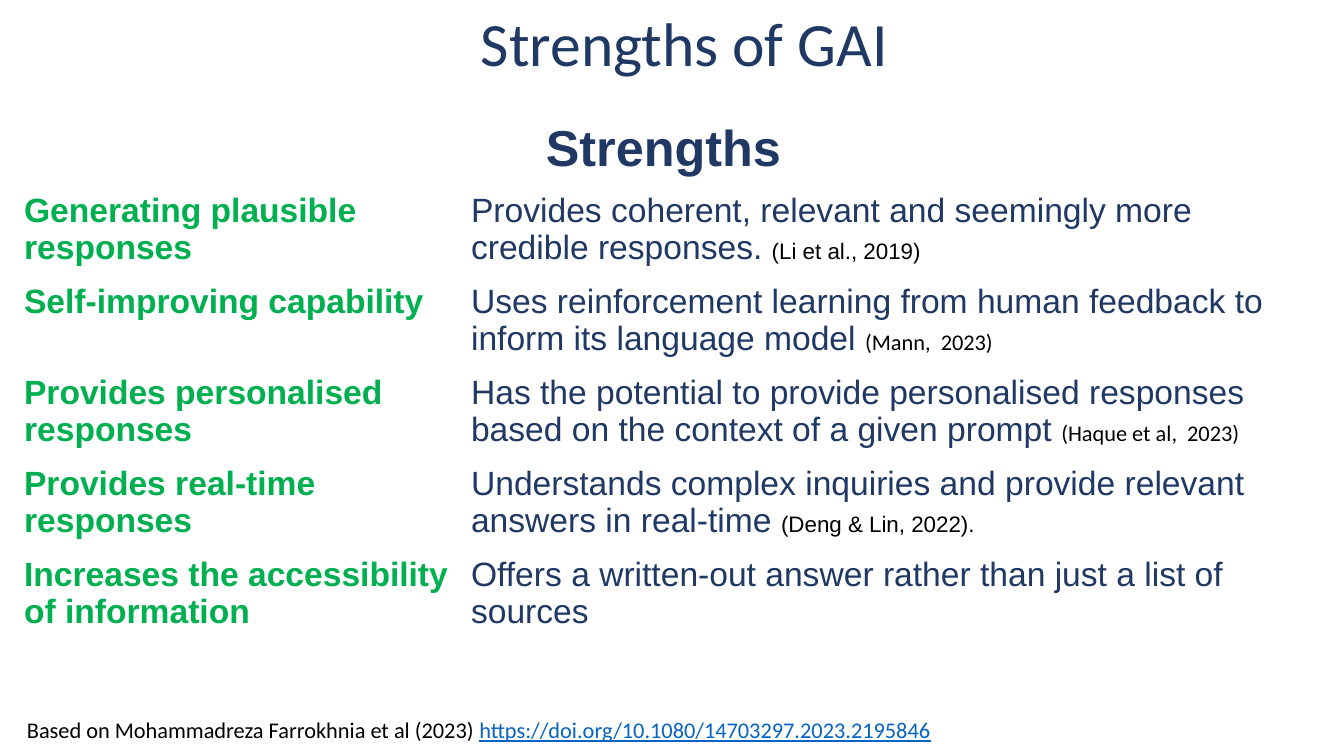
from dataclasses import dataclass

from pptx import Presentation
from pptx.dml.color import RGBColor
from pptx.enum.text import PP_ALIGN
from pptx.util import Pt

EMU_PER_PX = 914400 / 100.8


@dataclass(frozen=True)
class Theme:
    navy: str = "1F3864"
    green: str = "00B050"
    black: str = "000000"
    link: str = "0563C1"
    heading_font: str = "Calibri"
    body_font: str = "Arial"
    title: int = 44
    header: int = 36
    body: int = 24
    note: int = 16


THEME = Theme()

STRENGTHS = [
    ("Generating plausible responses",
     "Provides coherent, relevant and seemingly more credible responses. ",
     "(Li et al., 2019)", THEME.body_font),
    ("Self-improving capability",
     "Uses reinforcement learning from human feedback to inform its language model ",
     "(Mann,  2023)", THEME.heading_font),
    ("Provides personalised responses",
     "Has the potential to provide personalised responses based on the context of a given prompt ",
     "(Haque et al,  2023)", THEME.heading_font),
    ("Provides real-time responses",
     "Understands complex inquiries and provide relevant answers in real-time ",
     "(Deng & Lin, 2022).", THEME.body_font),
    ("Increases the accessibility of information",
     "Offers a written-out answer rather than just a list of sources",
     "", THEME.body_font),
]


def px(n):
    """Turn pixels into EMU."""
    return round(n * EMU_PER_PX)


def add_run(p, text, size, font, color, bold=False, underline=False):
    """Append a formatted run to a paragraph."""
    r = p.add_run()
    r.text = text
    r.font.size = Pt(size)
    r.font.name = font
    r.font.bold = bold
    r.font.underline = underline
    r.font.color.rgb = RGBColor.from_string(color)


def add_text(s, left, top, width, height):
    """Add a wrapping text box and return its first paragraph."""
    tf = s.shapes.add_textbox(px(left), px(top), px(width), px(height)).text_frame
    tf.word_wrap = True
    return tf.paragraphs[0]


def add_strengths_table(s, left, top, col_widths, header_height, row_height):
    """Add the table of strengths with its merged header row."""
    heights = [header_height] + [row_height] * len(STRENGTHS)
    table = s.shapes.add_table(len(heights), len(col_widths), px(left), px(top),
                               px(sum(col_widths)), px(sum(heights))).table
    table.first_row = False
    table.horz_banding = False
    for column, width in zip(table.columns, col_widths):
        column.width = px(width)
    for row, height in zip(table.rows, heights):
        row.height = px(height)
    for cell in table.iter_cells():
        cell.fill.background()

    table.cell(0, 0).merge(table.cell(0, 1))
    p = table.cell(0, 0).text_frame.paragraphs[0]
    p.alignment = PP_ALIGN.CENTER
    add_run(p, "Strengths ", THEME.header, THEME.body_font, THEME.navy, bold=True)

    for i, (strength, detail, citation, citation_font) in enumerate(STRENGTHS, 1):
        p = table.cell(i, 0).text_frame.paragraphs[0]
        add_run(p, strength, THEME.body, THEME.body_font, THEME.green, bold=True)
        p = table.cell(i, 1).text_frame.paragraphs[0]
        add_run(p, detail, THEME.body, THEME.body_font, THEME.navy)
        if citation:
            add_run(p, citation, THEME.note, citation_font, THEME.black)


def main():
    """Build the slide and save it."""
    prs = Presentation()
    prs.slide_width, prs.slide_height = px(1344), px(756)
    s = prs.slides.add_slide(prs.slide_layouts[6])

    p = add_text(s, 56, 0, 1271, 85)
    p.alignment = PP_ALIGN.CENTER
    add_run(p, "Strengths of GAI ", THEME.title, THEME.heading_font, THEME.navy)

    add_strengths_table(s, 14, 116, (447, 866), 68, 91)

    p = add_text(s, 17, 711, 952, 37)
    add_run(p, "Based on Mohammadreza Farrokhnia et al (2023) ",
            THEME.note, THEME.heading_font, THEME.black)
    add_run(p, "https://doi.org/10.1080/14703297.2023.2195846",
            THEME.note, THEME.heading_font, THEME.link, underline=True)

    prs.save("out.pptx")


if __name__ == "__main__":
    main()
